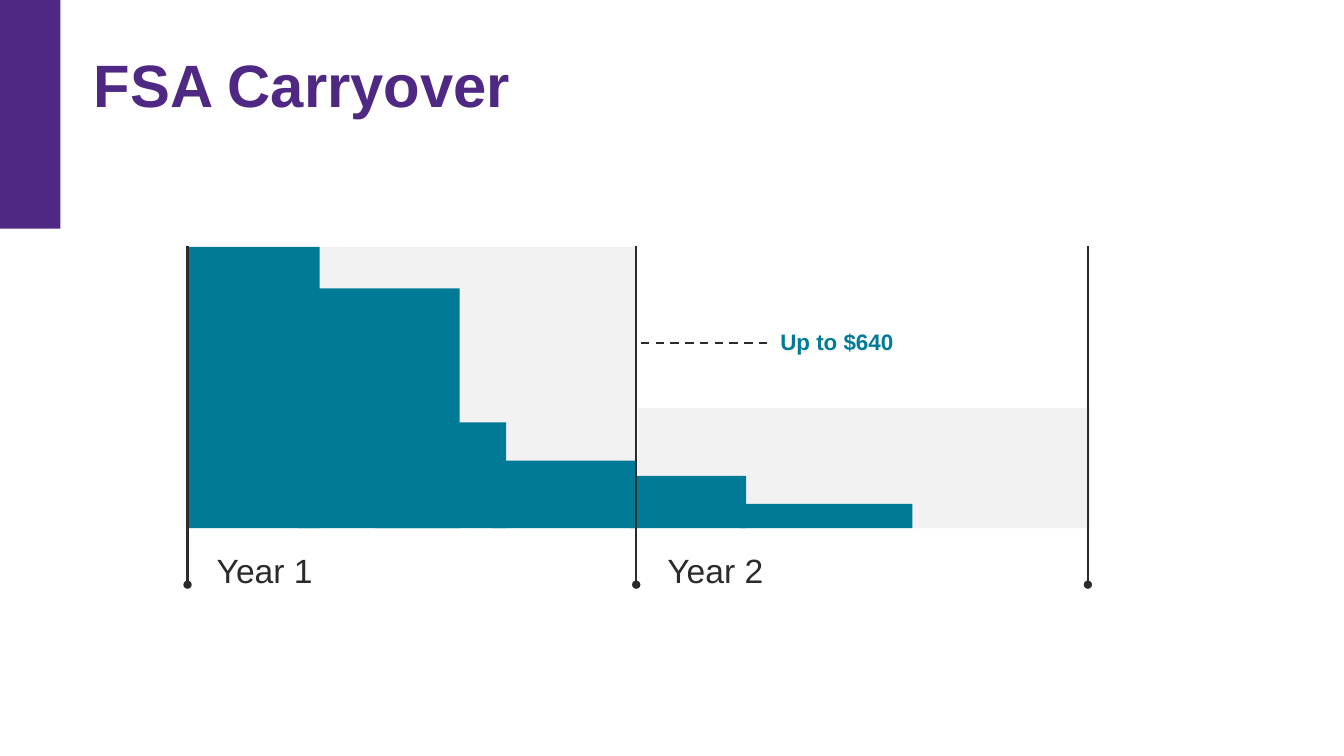
import pptx
import pptx.util
import pptx.dml.color
import pptx.enum.dml
import pptx.enum.shapes
import pptx.enum.text
import pptx.oxml.ns
from lxml import etree
from pptx.util import Inches

COLORS = {"purple": "4F2883", "teal": "007A96", "gray": "F2F2F2", "ink": "2A2C2C"}
BASELINE = 5.24
MARKER_TOP, MARKER_BOTTOM = 2.44, 5.8


class CarryoverSlide:
    font_name = "Arial"

    def __init__(self, deck):
        self.page = deck.slides.add_slide(deck.slide_layouts[5])

    def color(self, name):
        return pptx.dml.color.RGBColor.from_string(COLORS[name])

    def style(self, para, size, color, bold=False):
        para.alignment = pptx.enum.text.PP_ALIGN.LEFT
        para.font.name = self.font_name
        para.font.size = pptx.util.Pt(size)
        para.font.bold = bold
        para.font.color.rgb = self.color(color)

    def fill_frame(self, box, text, margin, size, color, bold=False):
        frame = box.text_frame
        frame.word_wrap = True
        frame.auto_size = pptx.enum.text.MSO_AUTO_SIZE.NONE
        frame.vertical_anchor = pptx.enum.text.MSO_ANCHOR.TOP
        frame.margin_left = frame.margin_right = Inches(margin)
        frame.margin_top = frame.margin_bottom = Inches(margin)
        para = frame.paragraphs[0]
        para.text = text
        self.style(para, size, color, bold)
        return para

    def title(self, text, left, top, width, height):
        box = self.page.shapes.title
        box.left, box.top = Inches(left), Inches(top)
        box.width, box.height = Inches(width), Inches(height)
        para = self.fill_frame(box, text, 0, 42.7, "purple", True)
        para.line_spacing = 1.1

    def label(self, text, left, top, width, height, size, color, bold=False):
        box = self.page.shapes.add_textbox(
            Inches(left), Inches(top), Inches(width), Inches(height))
        self.fill_frame(box, text, 0.13, size, color, bold)
        return box

    def block(self, left, top, width, height, color):
        box = self.page.shapes.add_shape(
            pptx.enum.shapes.MSO_SHAPE.RECTANGLE,
            Inches(left), Inches(top), Inches(width), Inches(height))
        box.shadow.inherit = False
        box.fill.solid()
        box.fill.fore_color.rgb = self.color(color)
        box.line.fill.background()

    def bar(self, left, top, width, color="teal"):
        self.block(left, top, width, BASELINE - top, color)

    def line(self, start, end):
        connector = self.page.shapes.add_connector(
            pptx.enum.shapes.MSO_CONNECTOR.STRAIGHT,
            *(Inches(value) for value in start + end))
        connector.line.color.rgb = self.color("ink")
        connector.line.width = pptx.util.Pt(1.5)
        etree.SubElement(connector._element.spPr, pptx.oxml.ns.qn("a:effectLst"))
        return connector

    def year_marker(self, x):
        marker = self.line((x, MARKER_TOP), (x, MARKER_BOTTOM))
        outline = marker.line._get_or_add_ln()
        etree.SubElement(outline, pptx.oxml.ns.qn("a:tailEnd"), type="oval")

    def leader(self, label, end):
        leader = self.line(end, end)
        leader.begin_connect(label, 1)
        leader.line.dash_style = pptx.enum.dml.MSO_LINE.DASH


def main():
    deck = pptx.Presentation()
    deck.slide_width, deck.slide_height = Inches(13.33), Inches(7.5)
    slide = CarryoverSlide(deck)

    slide.block(0, 0, 0.6, 2.27, "purple")
    slide.title("FSA Carryover", 0.93, 0.4, 11.85, 0.74)

    for left, top in [(1.84, 2.45), (6.33, 4.05)]:
        slide.bar(left, top, 4.48, "gray")

    balances = [(1.87, 2.45, 1.3), (2.96, 2.86, 1.6), (3.72, 4.19, 1.3),
                (4.89, 4.57, 1.41), (6.25, 4.72, 1.15), (7.35, 5, 1.7)]
    for left, top, width in balances:
        slide.bar(left, top, width)

    for text, left in [("Year 1", 2.02), ("Year 2", 6.49)]:
        slide.label(text, left, 5.33, 4, 0.67, 24, "ink")

    limit = slide.label("Up to $640", 7.61, 3.13, 3.42, 0.54, 16, "teal", True)
    slide.leader(limit, (6.31, 3.4))

    for x in (1.86, 6.31, 10.79):
        slide.year_marker(x)

    deck.save("out.pptx")


if __name__ == "__main__":
    main()
